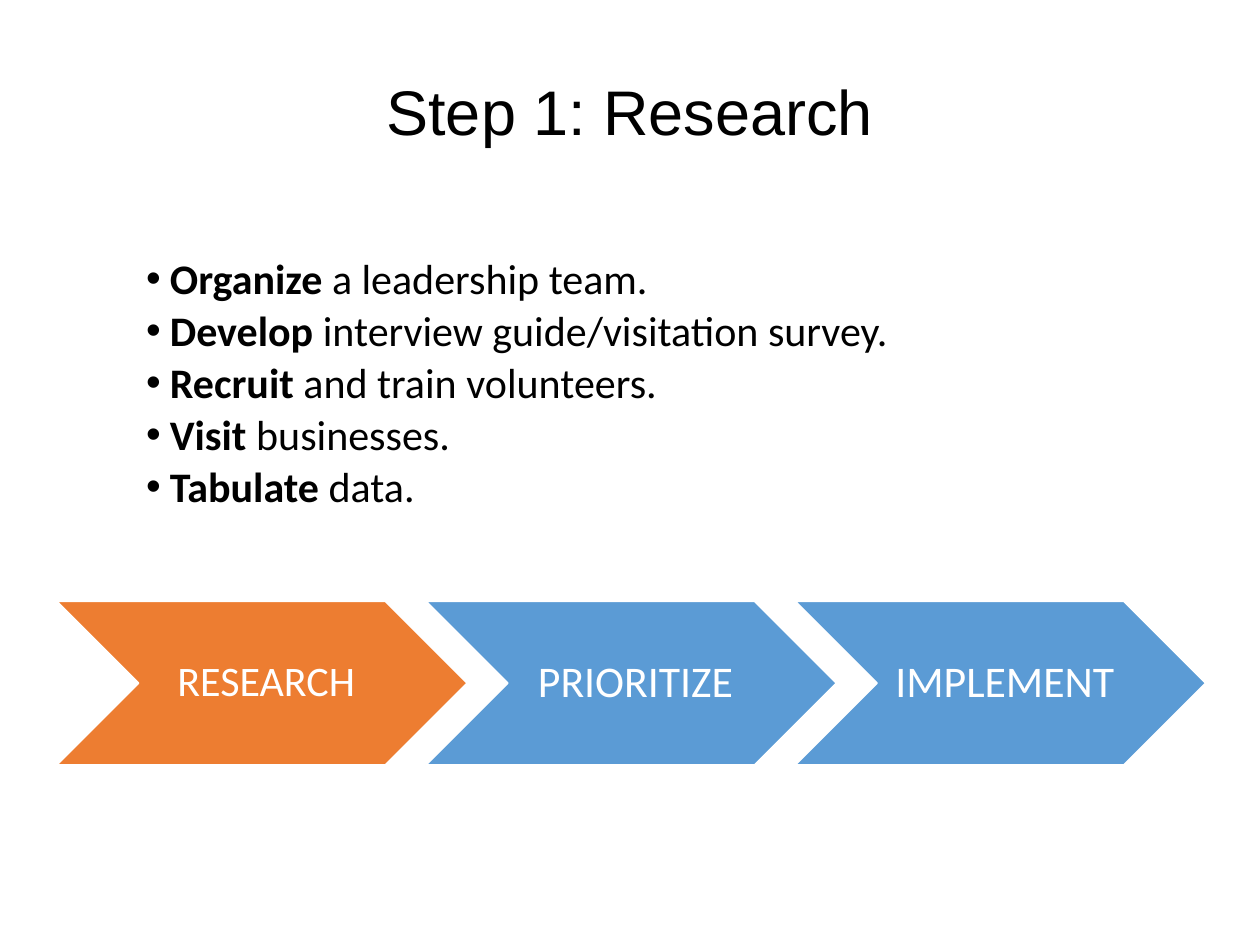
import lxml.etree
import pptx
import pptx.dml.color
import pptx.enum.shapes
import pptx.enum.text
import pptx.oxml.ns
import pptx.util

Pt = pptx.util.Pt
ALIGN = pptx.enum.text.PP_ALIGN
ANCHOR = pptx.enum.text.MSO_ANCHOR

COLORS = {"text": "000000", "current": "ED7D31", "other": "5B9BD5", "white": "FFFFFF"}

TASKS = [
    ("Organize", " a leadership team."),
    ("Develop", " interview guide/visitation survey."),
    ("Recruit", " and train volunteers."),
    ("Visit", " businesses."),
    ("Tabulate", " data."),
]

STEPS = [("RESEARCH", "current", 24), ("PRIORITIZE", "other", 25), ("IMPLEMENT", "other", 25)]
STEP_LEFT, STEP_TOP, STEP_WIDTH, STEP_HEIGHT = 32.4, 343.6, 234.6, 93.6
STEP_PITCH = 211


class SlideBuilder:
    """Holds the text style and the slide being filled."""

    line_spacing = 0.9
    title_font = "Arial"
    body_font = "Calibri"

    def __init__(self, slide):
        self.slide = slide

    def color(self, name):
        return pptx.dml.color.RGBColor.from_string(COLORS[name])

    def style(self, font, name, size, color):
        font.name = name
        font.size = Pt(size)
        font.color.rgb = self.color(color)

    def text_box(self, left, top, width, height, anchor):
        box = self.slide.shapes.add_textbox(Pt(left), Pt(top), Pt(width), Pt(height))
        box.text_frame.word_wrap = True
        box.text_frame.vertical_anchor = anchor
        return box.text_frame

    def centered(self, frame, text, name, size, color):
        frame.text = text
        para = frame.paragraphs[0]
        para.alignment = ALIGN.CENTER
        para.line_spacing = self.line_spacing
        self.style(para.runs[0].font, name, size, color)

    def title(self, text, left, top, width, height):
        frame = self.text_box(left, top, width, height, ANCHOR.MIDDLE)
        self.centered(frame, text, self.title_font, 36, "text")

    def bullets(self, items, left, top, width, height):
        """Each item is a bold lead word and the rest of its sentence."""
        frame = self.text_box(left, top, width, height, ANCHOR.TOP)
        for index, item in enumerate(items):
            para = frame.add_paragraph() if index else frame.paragraphs[0]
            para.level = 1
            para.line_spacing = self.line_spacing
            para.space_before = Pt(3.8 if index else 0)
            properties = para._p.get_or_add_pPr()
            properties.set("marL", str(Pt(40.5)))
            properties.set("indent", str(Pt(-13.5)))
            font = lxml.etree.SubElement(properties, pptx.oxml.ns.qn("a:buFont"))
            font.set("typeface", "Arial")
            bullet = lxml.etree.SubElement(properties, pptx.oxml.ns.qn("a:buChar"))
            bullet.set("char", "•")
            for text, bold in zip(item, (True, False)):
                span = para.add_run()
                span.text = text
                span.font.bold = bold
                self.style(span.font, self.body_font, 24, "text")

    def chevron(self, text, fill, size, left, top, width, height):
        shape = self.slide.shapes.add_shape(
            pptx.enum.shapes.MSO_SHAPE.CHEVRON, Pt(left), Pt(top), Pt(width), Pt(height)
        )
        shape.shadow.inherit = False
        shape.fill.solid()
        shape.fill.fore_color.rgb = self.color(fill)
        shape.line.color.rgb = self.color("white")
        shape.line.width = Pt(1)
        frame = shape.text_frame
        frame.word_wrap = True
        frame.vertical_anchor = ANCHOR.MIDDLE
        frame.margin_left = Pt(7.5)
        frame.margin_top = frame.margin_right = frame.margin_bottom = Pt(2.6)
        self.centered(frame, text, self.body_font, size, "white")


def main():
    deck = pptx.Presentation()
    deck.slide_width, deck.slide_height = Pt(720), Pt(540)
    builder = SlideBuilder(deck.slides.add_slide(deck.slide_layouts[6]))

    builder.title("Step 1: Research", 49.5, 33, 621, 65.5)
    builder.bullets(TASKS, 49.5, 144, 621, 342.7)
    for index, (text, fill, size) in enumerate(STEPS):
        left = STEP_LEFT + index * STEP_PITCH
        builder.chevron(text, fill, size, left, STEP_TOP, STEP_WIDTH, STEP_HEIGHT)

    deck.save("out.pptx")


if __name__ == "__main__":
    main()
